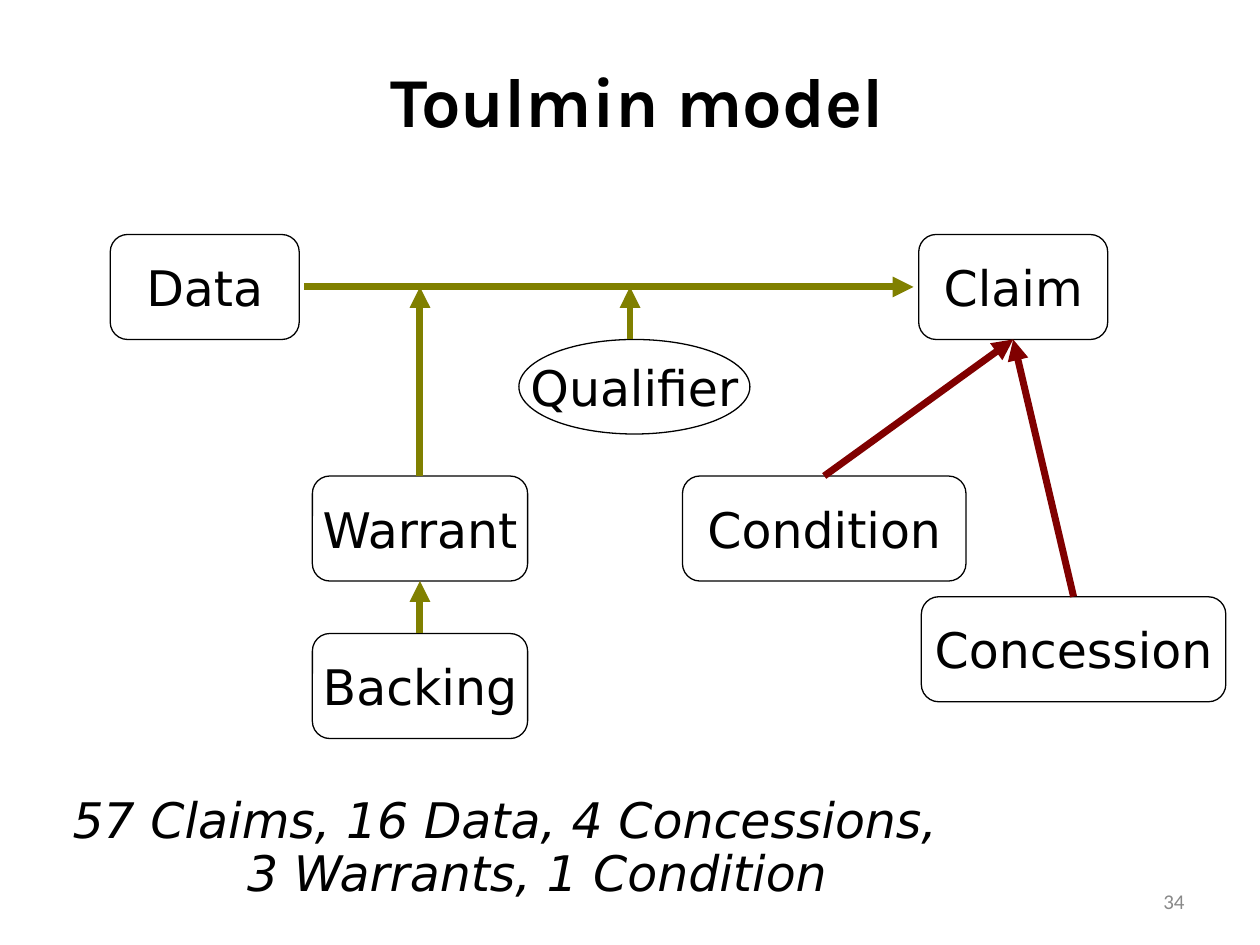
from dataclasses import dataclass

from lxml.etree import SubElement
from pptx import Presentation
from pptx.dml.color import RGBColor as Rgb
from pptx.enum.shapes import MSO_CONNECTOR as Link, MSO_SHAPE as Kind
from pptx.enum.text import MSO_ANCHOR as Anchor, PP_ALIGN as Align
from pptx.oxml.ns import qn
from pptx.util import Pt


@dataclass(frozen=True)
class Theme:
    """Colours, fonts and type sizes of the slide."""
    ink: Rgb = Rgb(0, 0, 0)
    grey: Rgb = Rgb(0x89, 0x89, 0x89)
    olive: Rgb = Rgb(0x80, 0x80, 0)
    red: Rgb = Rgb(0x80, 0, 0)
    head: str = "Karla"
    body: str = "DejaVu Sans"
    foot: str = "Calibri"
    large: int = 40
    mid: int = 28
    small: int = 12


THEME = Theme()
TOP, LEFT, BOTTOM, RIGHT = range(4)


def write(shape, text, size, face, color, align=Align.CENTER):
    """Write one run into a shape and return its paragraph and run."""
    para = shape.text_frame.paragraphs[0]
    para.alignment = align
    run = para.add_run()
    run.text = text
    run.font.size = Pt(size)
    run.font.name = face
    run.font.color.rgb = color
    return para, run


def add_box(slide, box, anchor=Anchor.MIDDLE):
    """Add an empty wrapping text box."""
    area = slide.shapes.add_textbox(*map(Pt, box))
    area.text_frame.word_wrap = True
    area.text_frame.vertical_anchor = anchor
    return area


def add_title(slide, box, text):
    """Place the bold heading."""
    _, run = write(add_box(slide, box), text, THEME.large, THEME.head, THEME.ink)
    run.font.bold = True


def add_node(slide, box, text, kind=Kind.FLOWCHART_ALTERNATE_PROCESS):
    """Place one labelled, outlined node."""
    node = slide.shapes.add_shape(kind, *map(Pt, box))
    node.shadow.inherit = False
    node.fill.background()
    node.line.color.rgb = THEME.ink
    node.line.width = Pt(0.75)
    frame = node.text_frame
    frame.word_wrap = False
    frame.vertical_anchor = Anchor.MIDDLE
    frame.margin_left = frame.margin_right = 0
    write(node, text, THEME.mid, THEME.body, THEME.ink)
    return node


def add_arrow(slide, start, end, color, tail=None, tip=None):
    """Draw an arrow between two points, joined to any given node sides."""
    line = slide.shapes.add_connector(Link.STRAIGHT, *map(Pt, (*start, *end)))
    line.line.color.rgb = color
    line.line.width = Pt(4)
    if tail:
        line.begin_connect(tail, TOP)
    if tip:
        line.end_connect(tip, BOTTOM)
    SubElement(line.line._get_or_add_ln(), qn("a:tailEnd"), type="triangle")
    SubElement(line._element.spPr, qn("a:effectLst"))


def add_model(slide, box):
    """Place the argument diagram."""
    x, y, wide, _ = box
    high = 60
    axis = y + high / 2
    low = y + 138
    data = (x, y, 108, high)
    goal = (x + 462, y, 108, high)
    stem = x + 177
    add_node(slide, data, "Data")
    claim = add_node(slide, goal, "Claim")
    add_node(slide, (x + 233.5, y + high, 132, 54), "Qualifier", Kind.OVAL)
    warrant, backing = [
        add_node(slide, (stem - 61.5, top, 123, high), name)
        for name, top in (("Warrant", low), ("Backing", low + 90))
    ]
    rebuts = [
        add_node(slide, (x + 327, low, 162, high), "Condition"),
        add_node(slide, (x + wide - 174, y + 207, 174, high), "Concession"),
    ]
    add_arrow(slide, (stem, low + 90), (stem, low + high), THEME.olive, backing, warrant)
    add_arrow(slide, (stem, low), (stem, axis), THEME.olive, warrant)
    add_arrow(slide, (x + 111, axis), (x + 459, axis), THEME.olive)
    add_arrow(slide, (x + 297, y + high), (x + 297, axis), THEME.olive)
    for node in rebuts:
        add_arrow(slide, (x, y), (x, y), THEME.red, node, claim)


def add_count(slide, box, text):
    """Place the italic tally with a hanging indent."""
    area = add_box(slide, box, Anchor.TOP)
    para, run = write(area, text, THEME.mid, THEME.body, THEME.ink)
    para.line_spacing = 0.9
    run.font.italic = True
    props = para._p.get_or_add_pPr()
    props.set("marL", str(Pt(36.75)))
    props.set("indent", str(Pt(-36.75)))


def add_page(slide, box, text):
    """Place the page number."""
    write(add_box(slide, box), text, THEME.small, THEME.foot, THEME.grey, Align.RIGHT)


def main():
    """Build and save the slide."""
    deck = Presentation()
    deck.slide_width, deck.slide_height = Pt(720), Pt(540)
    slide = deck.slides.add_slide(deck.slide_layouts[6])
    add_title(slide, (40, 12, 648, 90), "Toulmin model")
    add_page(slide, (516, 500.5, 168, 28.75), "34")
    add_model(slide, (63, 134, 637.5, 288))
    add_count(slide, (25, 451.5, 527, 67.5),
              "57 Claims, 16 Data, 4 Concessions, 3 Warrants, 1 Condition")
    deck.save("out.pptx")


if __name__ == "__main__":
    main()
